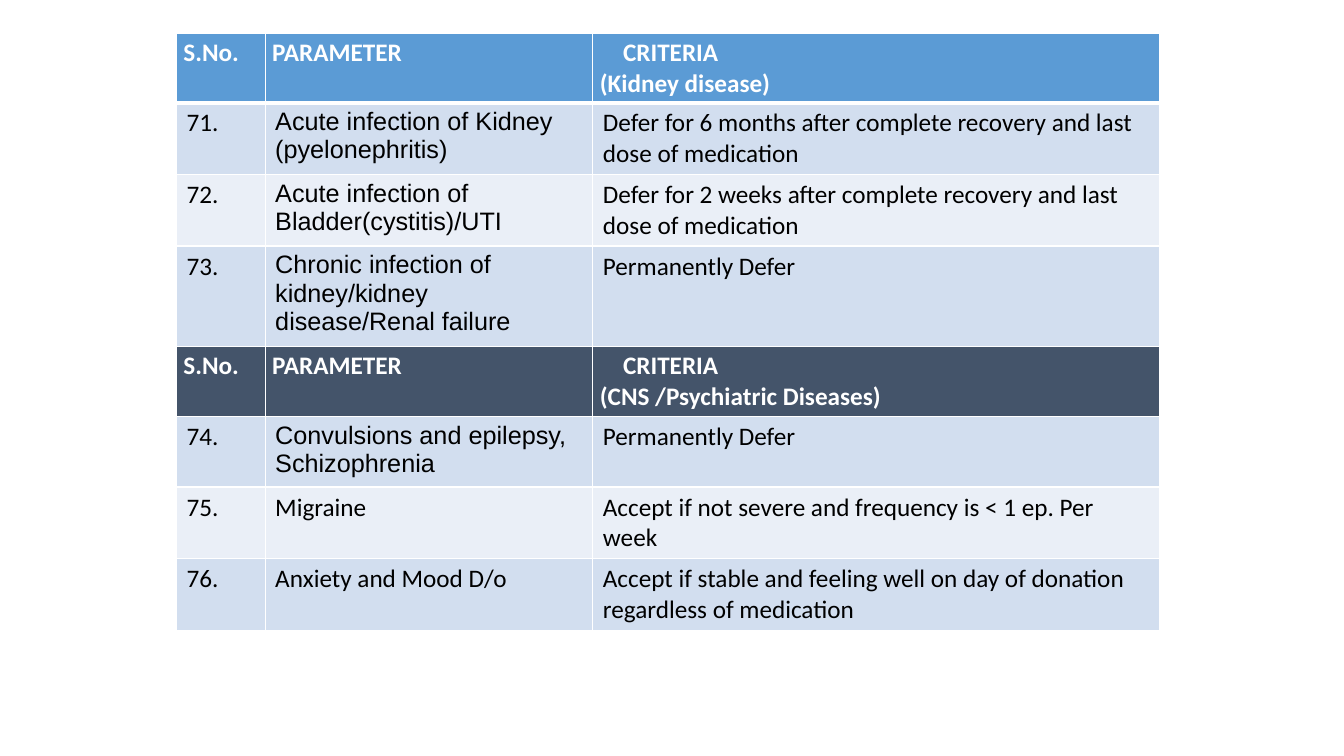
from lxml.etree import SubElement
from pptx import Presentation
from pptx.dml.color import RGBColor
from pptx.oxml.ns import qn
from pptx.util import Inches, Pt

COLORS = {
    "white": "FFFFFF", "black": "000000",
    "kidney": "5B9BD5", "cns": "44546A",
    "band_dark": "D2DEEF", "band_light": "EAEFF7",
}
COLUMN_WIDTHS = (0.88, 3.25, 5.62)

# Each section: header colour, disease group, criteria rows
# Each row: number, parameter, parameter font, criterion, height
SECTIONS = [
    ("kidney", "(Kidney disease)", [
        ("71.", "Acute infection of Kidney (pyelonephritis)", "Arial",
         "Defer for 6 months after complete recovery and last dose of medication", 0.7),
        ("72.", "Acute infection of Bladder(cystitis)/UTI", "Arial",
         "Defer for 2 weeks after complete recovery and last dose of medication", 0.7),
        ("73.", "Chronic infection of kidney/kidney disease/Renal failure", "Arial",
         "Permanently Defer", 1.0),
    ]),
    ("cns", "(CNS /Psychiatric Diseases)", [
        ("74.", "Convulsions and epilepsy, Schizophrenia", "Arial",
         "Permanently Defer", 0.7),
        ("75.", "Migraine", "Calibri",
         "Accept if not severe and frequency is < 1 ep. Per week", 0.7),
        ("76.", "Anxiety and Mood D/o", "Calibri",
         "Accept if stable and feeling well on day of donation regardless of medication", 0.7),
    ]),
]
HEADER_HEIGHT = 0.67


def set_borders(cell, top, bottom):
    """White cell borders; widths in points."""
    properties = cell._tc.get_or_add_tcPr()
    for side, width in (("L", 1), ("R", 1), ("T", top), ("B", bottom)):
        border = SubElement(properties, qn(f"a:ln{side}"), w=str(Pt(width)))
        fill = SubElement(border, qn("a:solidFill"))
        SubElement(fill, qn("a:srgbClr"), val=COLORS["white"])


def add_text(paragraph, text, font, color, bold):
    run = paragraph.add_run()
    run.text = text
    run.font.name = font
    run.font.size = Pt(18)
    run.font.bold = bold
    run.font.color.rgb = RGBColor.from_string(COLORS[color])


def fill_cell(cell, lines, fill, font="Calibri", header=False, top=1, bottom=1):
    set_borders(cell, top, bottom)
    cell.fill.solid()
    cell.fill.fore_color.rgb = RGBColor.from_string(COLORS[fill])
    cell.margin_left = cell.margin_right = Inches(0.07 if header else 0.1)
    cell.margin_top = cell.margin_bottom = Inches(0.04 if header else 0.05)
    frame = cell.text_frame
    for index, line in enumerate(lines):
        paragraph = frame.add_paragraph() if index else frame.paragraphs[0]
        add_text(paragraph, line, font, "white" if header else "black", header)


def fill_header(row, fill, disease_group, bottom):
    row.height = Inches(HEADER_HEIGHT)
    headings = (["S.No."], ["PARAMETER"], ["CRITERIA", disease_group])
    for cell, lines in zip(row.cells, headings):
        fill_cell(cell, lines, fill, header=True, bottom=bottom)
    # Indent the word CRITERIA above its disease group
    criteria = row.cells[2].text_frame.paragraphs[0]
    criteria._p.get_or_add_pPr().set("marL", str(Inches(0.23)))


def fill_criterion(row, entry, fill, top):
    number, parameter, parameter_font, criterion, height = entry
    row.height = Inches(height)
    fonts = ("Calibri", parameter_font, "Calibri")
    for cell, text, font in zip(row.cells, (number, parameter, criterion), fonts):
        fill_cell(cell, [text], fill, font, top=top)


def add_deferral_table(slide, left, top, width, height):
    row_count = sum(1 + len(entries) for _, _, entries in SECTIONS)
    table = slide.shapes.add_table(row_count, len(COLUMN_WIDTHS), Inches(left),
                                   Inches(top), Inches(width), Inches(height)).table
    for column, column_width in zip(table.columns, COLUMN_WIDTHS):
        column.width = Inches(column_width)

    rows = iter(table.rows)
    for section, (header_fill, disease_group, entries) in enumerate(SECTIONS):
        rule = 3 if section == 0 else 1  # heavier rule under the first header
        fill_header(next(rows), header_fill, disease_group, rule)
        for index, entry in enumerate(entries):
            band = "band_light" if index % 2 else "band_dark"
            fill_criterion(next(rows), entry, band, 1 if index else rule)


def main():
    presentation = Presentation()
    presentation.slide_width = Inches(13.33)
    presentation.slide_height = Inches(7.5)
    slide = presentation.slides.add_slide(presentation.slide_layouts[6])
    add_deferral_table(slide, 1.75, 0.33, sum(COLUMN_WIDTHS), 5.84)
    presentation.save("out.pptx")


if __name__ == "__main__":
    main()
